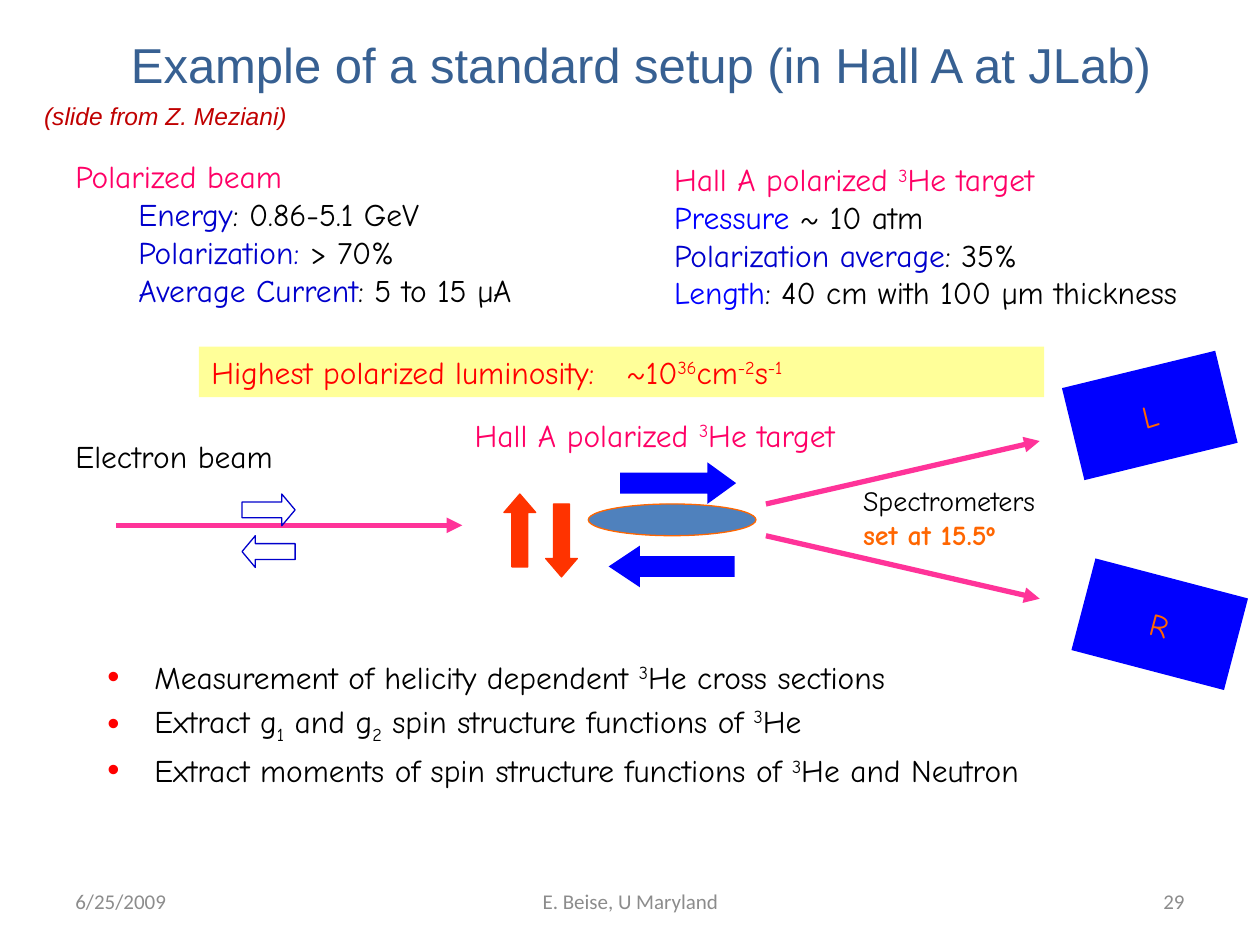
from lxml.etree import SubElement as Sub
from pptx import Presentation
from pptx.dml.color import RGBColor as Rgb
from pptx.enum.shapes import MSO_CONNECTOR as Link, MSO_SHAPE as Kind
from pptx.enum.text import MSO_ANCHOR as Anchor, MSO_AUTO_SIZE as Fit, PP_ALIGN as Align
from pptx.oxml.ns import qn
from pptx.util import Cm, Pt

HUES = {
    "title": "376092", "credit": "C00000", "head": "FF0066", "navy": "0000CC",
    "blue": "0000FF", "black": "000000", "red": "FF0000", "yellow": "FFFF99",
    "pink": "FF3399", "orange": "FF6600", "spin": "FF3300", "steel": "4F81BD",
    "gray": "8C8C8C",
}
SHIFTS = {"^": "30000", "_": "-25000"}  # leading mark: superscript, subscript


class Deck:
    def __init__(self):
        self.prs = Presentation()
        self.prs.slide_width, self.prs.slide_height = Cm(25.4), Cm(19.05)
        self.slide = self.prs.slides.add_slide(self.prs.slide_layouts[1])
        self.shapes = self.slide.shapes
        self.font = "Comic Neue"

    def place(self, item, box):
        item.left, item.top, item.width, item.height = map(Cm, box)

    def fill_in(self, frame, rows, size=18, font=None, align=None, anchor=Anchor.TOP,
                bold=False, italic=False):
        """Each row is a list of (hue, piece, piece, ...) groups."""
        frame.word_wrap = True
        frame.auto_size = Fit.NONE
        frame.vertical_anchor = anchor
        for i, row in enumerate(rows):
            para = frame.add_paragraph() if i else frame.paragraphs[0]
            para.alignment = align
            for hue, *parts in row:
                for part in parts:
                    run = para.add_run()
                    run.text = part.lstrip("^_")
                    face = run.font
                    face.name, face.size = font or self.font, Pt(size)
                    face.bold, face.italic = bold, italic
                    face.color.rgb = Rgb.from_string(HUES[hue])
                    if part[0] in SHIFTS:
                        run._r.get_or_add_rPr().set("baseline", SHIFTS[part[0]])
        return frame.paragraphs

    def title(self, box, text):
        self.place(self.shapes.title, box)
        self.fill_in(self.shapes.title.text_frame, [[("title", text)]], 28, "Arial",
                     Align.CENTER, Anchor.MIDDLE)

    def bullets(self, box, rows):
        body = self.slide.placeholders[1]
        self.place(body, box)
        for para in self.fill_in(body.text_frame, rows):
            prop = self.indent(para, 0.95, -0.95)
            Sub(Sub(prop, qn("a:buClr")), qn("a:srgbClr")).set("val", HUES["red"])
            Sub(prop, qn("a:buSzPct")).set("val", "110000")
            Sub(prop, qn("a:buChar")).set("char", "•")

    def indent(self, para, left, first=0):
        prop = para._p.get_or_add_pPr()
        prop.set("marL", str(Cm(left)))
        prop.set("indent", str(Cm(first)))
        return prop

    def text(self, box, rows, **style):
        item = self.shapes.add_textbox(*map(Cm, box))
        return self.fill_in(item.text_frame, rows, **style)

    def shape(self, kind, box, fill=None, line=None, head=None, turn=0):
        item = self.shapes.add_shape(kind, *map(Cm, box))
        item.shadow.inherit = False
        item.rotation = turn
        if head:
            item.adjustments[1] = head
        if fill:
            item.fill.solid()
            item.fill.fore_color.rgb = Rgb.from_string(HUES[fill])
        else:
            item.fill.background()
        if line:
            item.line.color.rgb = Rgb.from_string(HUES[line])
            item.line.width = Pt(0.75)
        else:
            item.line.fill.background()
        return item

    def arrow(self, *ends):
        item = self.shapes.add_connector(Link.STRAIGHT, *map(Cm, ends))
        item.line.color.rgb = Rgb.from_string(HUES["pink"])
        item.line.width = Pt(3)
        Sub(item.line._get_or_add_ln(), qn("a:tailEnd")).set("type", "triangle")
        Sub(item._element.spPr, qn("a:effectLst"))


def main():
    deck = Deck()
    target = [("head", "Hall A polarized ", "^3", "He target")]

    # Heading
    deck.title((1.07, 0.43, 23.7, 1.7), "Example of a standard setup (in Hall A at JLab)")
    deck.text((0.64, 1.91, 5.6, 0.86), [[("credit", "(slide from Z. Meziani)")]],
              size=14, font="Arial", italic=True)

    # Beam and target data
    beam = deck.text((1.27, 3.05, 11, 3.3), [
        [("head", "Polarized beam")],
        [("navy", "Energy"), ("black", ": 0.86-5.1 GeV")],
        [("navy", "Polarization:"), ("black", " > 70%")],
        [("navy", "Average Current"), ("black", ": 5 to 15 µA")],
    ])
    gas = deck.text((12.07, 3.1, 12.9, 4.32), [
        target,
        [("blue", "Pressure"), ("black", " ~ 10 atm")],
        [("navy", "Polarization average"), ("black", ": 35%")],
        [("blue", "Length"), ("black", ": 40 cm with 100 µm thickness")],
    ])
    for para in (*beam[1:], *gas):
        deck.indent(para, 1.27)

    # Luminosity band
    band = deck.shape(Kind.RECTANGLE, (4.01, 6.99, 17.04, 1.02), "yellow")
    row = deck.fill_in(band.text_frame, [
        [("red", "Highest polarized luminosity:\t~10", "^36", "cm", "^-2", "s", "^-1")],
    ], align=Align.LEFT)[0]
    stop = Sub(Sub(row._p.get_or_add_pPr(), qn("a:tabLst")), qn("a:tab"))
    stop.set("pos", str(Cm(8.37)))
    stop.set("algn", "l")

    # Beam paths
    deck.arrow(2.34, 10.59, 9.32, 10.59)
    deck.arrow(15.44, 10.16, 20.96, 8.89)
    deck.arrow(15.44, 10.8, 20.96, 12.07)

    # Spin arrows and target cell
    for kind, box, fill, line, head in (
        (Kind.RIGHT_ARROW, (4.88, 9.96, 1.07, 0.64), None, "navy", 0.42),
        (Kind.LEFT_ARROW, (4.88, 10.8, 1.07, 0.64), None, "navy", 0.42),
        (Kind.LEFT_ARROW, (12.27, 11, 2.54, 0.84), "blue", None, 0.75),
        (Kind.RIGHT_ARROW, (12.5, 9.32, 2.34, 0.84), "blue", None, 0.69),
        (Kind.UP_ARROW, (10.16, 9.96, 0.64, 1.47), "spin", "spin", 0.58),
        (Kind.DOWN_ARROW, (11, 10.16, 0.64, 1.47), "spin", "spin", 0.58),
        (Kind.OVAL, (11.86, 10.16, 3.38, 0.64), "steel", "orange", None),
    ):
        deck.shape(kind, box, fill, line, head)

    # Spectrometers
    for name, left, top, turn in (("L", 21.59, 7.42, -13.7), ("R", 21.79, 11.63, 14.7)):
        arm = deck.shape(Kind.RECTANGLE, (left, top, 3.18, 1.91), "blue", turn=turn)
        deck.fill_in(arm.text_frame, [[("orange", name)]], align=Align.CENTER,
                     anchor=Anchor.MIDDLE)

    # Diagram labels
    deck.text((1.27, 8.69, 6.17, 1.27), [[("black", "Electron beam")]])
    deck.text((9.32, 8.26, 8.61, 1.02), [target])
    label = deck.text((17.15, 9.63, 4.5, 1.63),
                      [[("black", "Spectrometers")], [("orange", "set at 15.5º")]], size=16)
    label[1].runs[0].font.bold = True

    # Goals
    deck.bullets((1.91, 13.13, 22.22, 4.45), [
        [("black", "Measurement of helicity dependent ", "^3", "He cross sections")],
        [("black", "Extract g", "_1", " and g", "_2", " spin structure functions of ",
          "^3", "He")],
        [("black", "Extract moments of spin structure functions of ", "^3",
          "He and Neutron")],
    ])

    # Footer
    for note, left, width, align in (
        ("6/25/2009", 1.27, 5.92, Align.LEFT),
        ("E. Beise, U Maryland", 8.69, 8.04, Align.CENTER),
        ("29", 18.21, 5.92, Align.RIGHT),
    ):
        deck.text((left, 17.65, width, 1.02), [[("gray", note)]], size=12,
                  font="Calibri", align=align, anchor=Anchor.MIDDLE)

    deck.prs.save("out.pptx")


if __name__ == "__main__":
    main()
